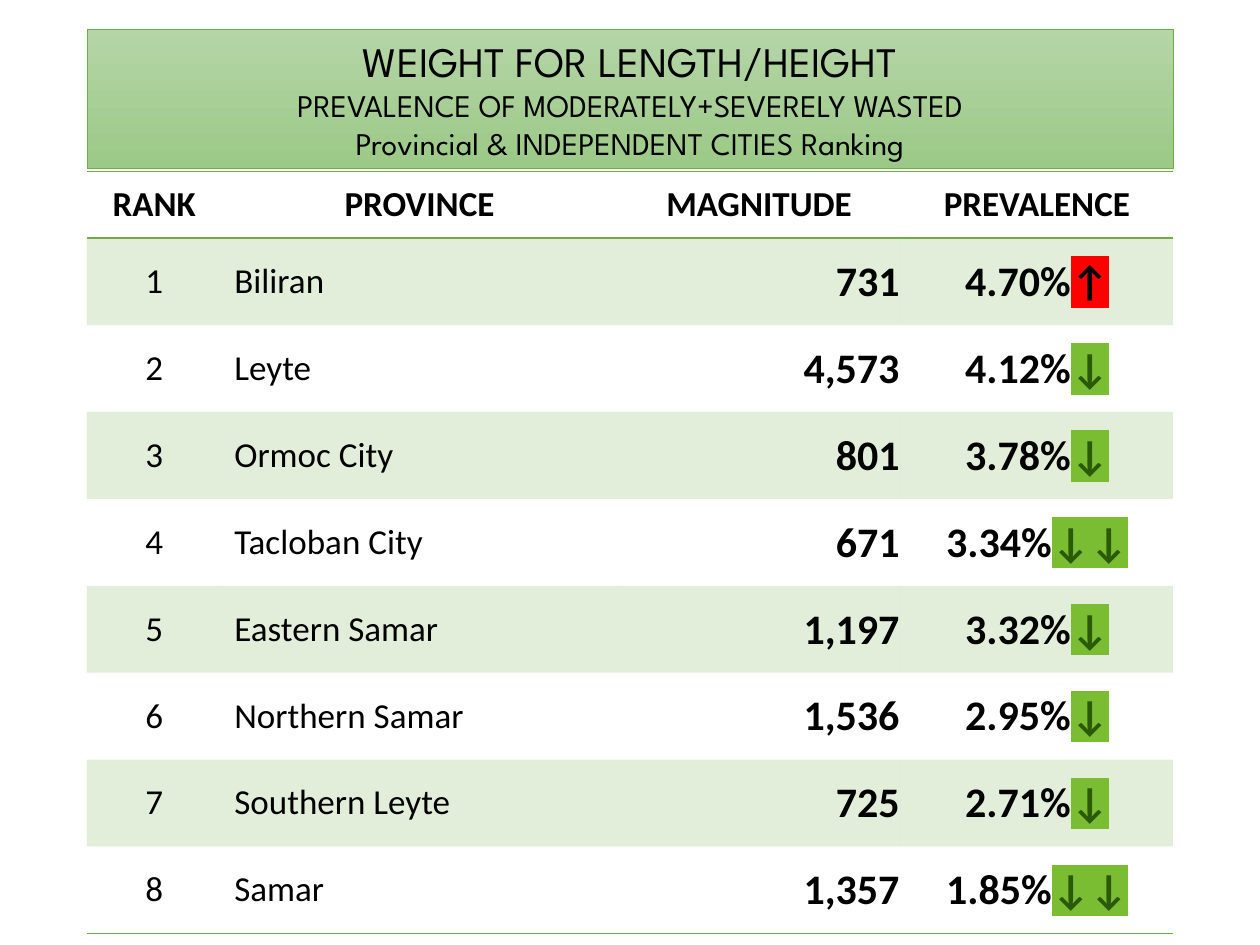
import pptx
import pptx.util
import pptx.dml.color
import pptx.enum.shapes
import pptx.enum.text
import pptx.oxml
import pptx.oxml.ns

Inches, Pt = pptx.util.Inches, pptx.util.Pt
ALIGN = pptx.enum.text.PP_ALIGN
MIDDLE = pptx.enum.text.MSO_ANCHOR.MIDDLE
qn = pptx.oxml.ns.qn
NS = pptx.oxml.ns.nsdecls("a")

COLORS = {"text": "000000", "green": "70AD47", "grad_top": "B5D5A7",
          "grad_bottom": "9CC987", "up": "FF0000", "down": "7ABC32",
          "down_text": "2A5A06"}
TITLE = [("WEIGHT FOR LENGTH/HEIGHT", 24),
         ("PREVALENCE OF MODERATELY+SEVERELY WASTED", 18),
         ("Provincial & INDEPENDENT CITIES Ranking", 18)]
HEADERS = ["RANK", "PROVINCE", "MAGNITUDE", "PREVALENCE"]
PROVINCES = [("Biliran", "731", "4.70%", "↑"),
             ("Leyte", "4,573", "4.12%", "↓"),
             ("Ormoc City", "801", "3.78%", "↓"),
             ("Tacloban City", "671", "3.34%", "↓↓"),
             ("Eastern Samar", "1,197", "3.32%", "↓"),
             ("Northern Samar", "1,536", "2.95%", "↓"),
             ("Southern Leyte", "725", "2.71%", "↓"),
             ("Samar", "1,357", "1.85%", "↓↓")]
COL_WIDTHS = [1.07, 3.14, 2.25, 2.16]
COL_ALIGNS = [ALIGN.CENTER, ALIGN.LEFT, ALIGN.RIGHT, ALIGN.CENTER]
HEADER_H, ROW_H = 0.53, 0.69
LEFT, TABLE_TOP = 0.69, 1.36
NO_STYLE = "{2D5ABB26-0587-4C30-8999-92F81FD0307C}"
LABEL = {"size": Pt(20), "bold": False, "name": "Calibri"}
HEADER = {**LABEL, "bold": True}
FIGURE = {**HEADER, "size": Pt(24)}
TIGHT = {"margin_left": Inches(0.01), "margin_right": Inches(0.01),
         "margin_top": Inches(0.01), "margin_bottom": 0}


def rgb(key):
    return pptx.dml.color.RGBColor.from_string(COLORS[key])


def set_all(obj, values):
    for name, value in values.items():
        setattr(obj, name, value)


def add_run(p, text, font, color="text", highlight=None):
    r = p.add_run()
    r.text = text
    set_all(r.font, font)
    r.font.color.rgb = rgb(color)
    if highlight:
        r.font._element.find(qn("a:solidFill")).addnext(pptx.oxml.parse_xml(
            f'<a:highlight {NS}><a:srgbClr val="{COLORS[highlight]}"/></a:highlight>'))


def add_border(cell, side):
    cell._tc.get_or_add_tcPr().insert(0, pptx.oxml.parse_xml(
        f'<a:ln{side} {NS} w="12700"><a:solidFill>'
        f'<a:srgbClr val="{COLORS["green"]}"/></a:solidFill></a:ln{side}>'))


def fill_cell(cell, banded):
    if not banded:
        cell.fill.background()
        return
    cell.fill.solid()
    cell.fill.fore_color.rgb = rgb("green")
    cell._tc.tcPr.find(qn("a:solidFill"))[0].append(
        pptx.oxml.parse_xml(f'<a:alpha {NS} val="20000"/>'))


def add_ranking(s):
    rows = [HEADERS] + [(str(i), *row) for i, row in enumerate(PROVINCES, 1)]
    heights = [HEADER_H] + [ROW_H] * len(PROVINCES)
    table = s.shapes.add_table(len(rows), len(HEADERS), Inches(LEFT), Inches(TABLE_TOP),
                               Inches(sum(COL_WIDTHS)), Inches(sum(heights))).table
    table._tbl.tblPr.find(qn("a:tableStyleId")).text = NO_STYLE
    for col, width in zip(table.columns, COL_WIDTHS):
        col.width = Inches(width)
    for i, (row, height) in enumerate(zip(rows, heights)):
        table.rows[i].height = Inches(height)
        for j, align in enumerate(COL_ALIGNS):
            cell = table.cell(i, j)
            cell.vertical_anchor = MIDDLE
            p = cell.text_frame.paragraphs[0]
            p.alignment = align if i else ALIGN.CENTER
            figure = i > 0 and j > 1
            add_run(p, row[j], HEADER if i == 0 else FIGURE if figure else LABEL)
            if figure:
                set_all(cell, TIGHT)
            if i and j == 3:
                rising = row[4] == "↑"
                add_run(p, row[4], FIGURE, "text" if rising else "down_text",
                        "up" if rising else "down")
            fill_cell(cell, i % 2 == 1)
            if i in (0, len(rows) - 1):
                add_border(cell, "B")
            if i == 0:
                add_border(cell, "T")


def add_title(s):
    sp = s.shapes.add_shape(pptx.enum.shapes.MSO_SHAPE.RECTANGLE, Inches(LEFT),
                            Inches(0.23), Inches(sum(COL_WIDTHS)), Inches(1.11))
    sp.shadow.inherit = False
    sp.fill.gradient()
    sp.fill.gradient_angle = 270
    for stop, key in zip(sp.fill.gradient_stops, ("grad_top", "grad_bottom")):
        stop.color.rgb = rgb(key)
    sp.line.color.rgb = rgb("green")
    sp.line.width = Pt(0.5)
    tf = sp.text_frame
    set_all(tf, {"word_wrap": True, "vertical_anchor": MIDDLE})
    for i, (text, size) in enumerate(TITLE):
        p = tf.add_paragraph() if i else tf.paragraphs[0]
        p.alignment = ALIGN.CENTER
        add_run(p, text, {"size": Pt(size), "name": "League Spartan"})


def main():
    prs = pptx.Presentation()
    set_all(prs, {"slide_width": Inches(10), "slide_height": Inches(7.5)})
    s = prs.slides.add_slide(prs.slide_layouts[6])
    add_ranking(s)
    add_title(s)
    prs.save("out.pptx")


if __name__ == "__main__":
    main()
